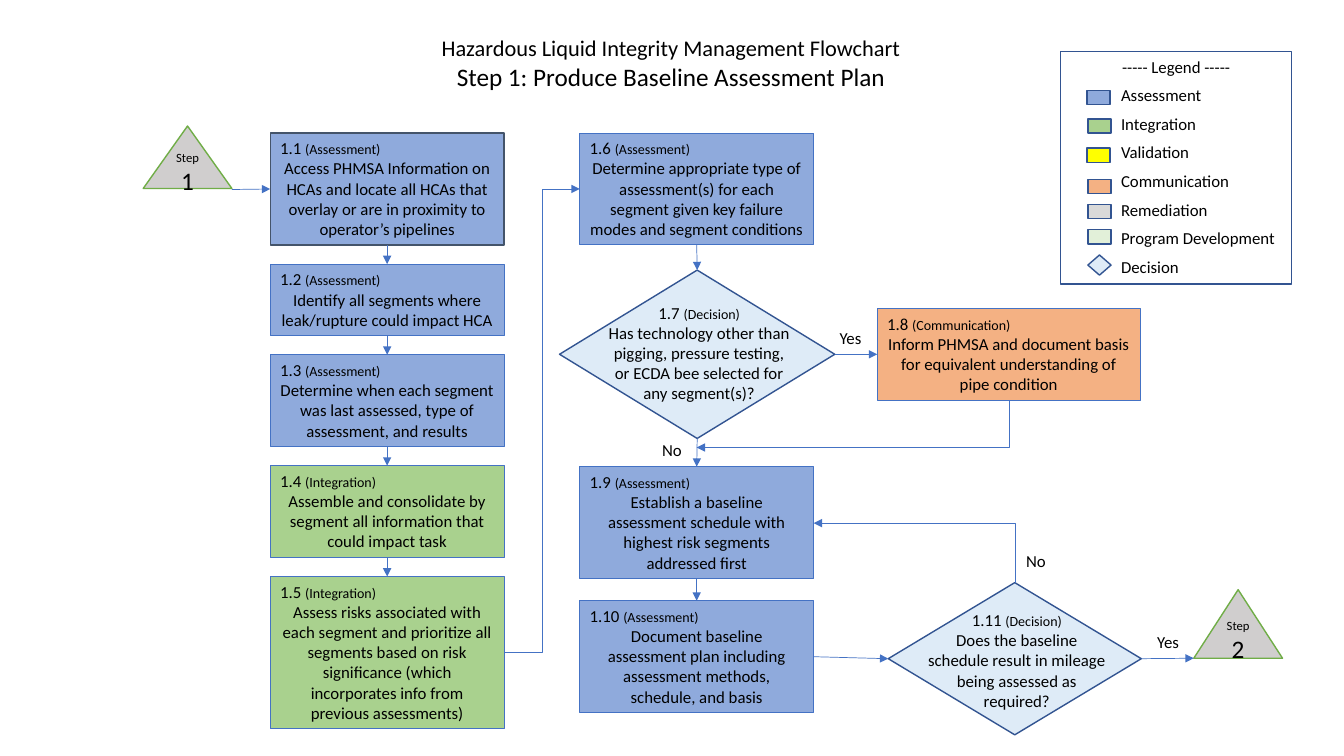
from dataclasses import dataclass
from typing import Optional

from lxml.etree import SubElement
from pptx import Presentation
from pptx.dml.color import RGBColor
from pptx.enum.shapes import MSO_CONNECTOR as Link, MSO_SHAPE as Shape
from pptx.enum.text import MSO_ANCHOR as Anchor, MSO_AUTO_SIZE as AutoSize, PP_ALIGN as Align
from pptx.oxml.ns import qn
from pptx.util import Inches, Pt


@dataclass(frozen=True)
class Theme:
    font: str = "Calibri"
    ink: str = "000000"
    outline: str = "325491"
    box_line: str = "4472C4"
    first_line: str = "44546A"
    step_fill: str = "D0CECE"
    step_line: str = "70AD47"
    assessment: str = "8FAADC"
    integration: str = "A9D18E"
    validation: str = "FFFF00"
    communication: str = "F4B183"
    remediation: str = "D9D9D9"
    program: str = "E2F0D9"
    decision: str = "DEEBF7"
    title: float = 18
    subtitle: float = 16
    body: float = 12
    kind: float = 10
    step: float = 9
    thin: float = 0.5
    medium: float = 0.75
    thick: float = 1


THEME = Theme()


@dataclass(frozen=True)
class Task:
    number: str
    kind: str
    text: str
    left: float
    top: float
    width: float
    height: float


@dataclass(frozen=True)
class Decision(Task):
    text_left: float
    text_top: float


@dataclass(frozen=True)
class Swatch:
    name: str
    fill: str
    left: float
    top: float


@dataclass(frozen=True)
class Arrow:
    """Ends are (task number, side); sides run 0 top, 1 left, 2 bottom, 3 right."""
    start: tuple[str, int]
    end: tuple[str, int]
    link: Link = Link.STRAIGHT


FILLS = {"Assessment": THEME.assessment, "Integration": THEME.integration,
         "Communication": THEME.communication}
COLUMN_LEFT, COLUMN_TOP, COLUMN_GAP, BOX_WIDTH = 2.68, 1.32, 0.19, 2.32
COLUMN = [
    ("1.1", "Assessment", 1.11, "Access PHMSA Information on HCAs and locate all HCAs that "
     "overlay or are in proximity to operator’s pipelines"),
    ("1.2", "Assessment", 0.71, "Identify all segments where leak/rupture could impact HCA"),
    ("1.3", "Assessment", 0.91, "Determine when each segment was last assessed, type of "
     "assessment, and results"),
    ("1.4", "Integration", 0.91, "Assemble and consolidate by segment all information that "
     "could impact task"),
    ("1.5", "Integration", 1.51, "Assess risks associated with each segment and prioritize all "
     "segments based on risk significance (which incorporates info from previous assessments)"),
]
TASKS = [
    Task("1.6", "Assessment", "Determine appropriate type of assessment(s) for each segment "
         "given key failure modes and segment conditions", 5.75, 1.32, BOX_WIDTH, 1.11),
    Task("1.8", "Communication", "Inform PHMSA and document basis for equivalent understanding "
         "of pipe condition", 8.7, 3.06, 2.61, 0.91),
    Task("1.9", "Assessment", "Establish a baseline assessment schedule with highest risk "
         "segments addressed first", 5.75, 4.63, BOX_WIDTH, 1.11),
    Task("1.10", "Assessment", "Document baseline assessment plan including assessment methods, "
         "schedule, and basis", 5.75, 5.96, BOX_WIDTH, 1.11),
]
DECISIONS = [
    Decision("1.7", "Decision", "Has technology other than pigging, pressure testing, or ECDA "
             "bee selected for any segment(s)?", 5.55, 2.68, 2.73, 1.67, 5.92, 2.95),
    Decision("1.11", "Decision", "Does the baseline schedule result in mileage being assessed "
             "as required?", 8.81, 5.78, 2.51, 1.51, 9.07, 6),
]
SWATCHES = [
    Swatch("Assessment", THEME.assessment, 10.78, 0.9),
    Swatch("Integration", THEME.integration, 10.79, 1.18),
    Swatch("Validation", THEME.validation, 10.78, 1.47),
    Swatch("Communication", THEME.communication, 10.79, 1.78),
    Swatch("Remediation", THEME.remediation, 10.79, 2.03),
    Swatch("Program Development", THEME.program, 10.79, 2.28),
    Swatch("Decision", THEME.decision, 10.79, 2.53),
]
ARROWS = [Arrow((a, 2), (b, 0)) for a, b in (
    ("1.1", "1.2"), ("1.2", "1.3"), ("1.3", "1.4"), ("1.4", "1.5"),
    ("1.6", "1.7"), ("1.7", "1.9"), ("1.9", "1.10"))] + [
    Arrow(("1.5", 3), ("1.6", 1), Link.ELBOW),
    Arrow(("1.7", 3), ("1.8", 1)),
    Arrow(("1.10", 3), ("1.11", 1)),
]
ANSWERS = [("Yes", 8.19, 3.2), ("No", 6.42, 4.31), ("Yes", 11.34, 6.22), ("No", 10.03, 5.41)]


def add_block(page, shape: Shape, left: float, top: float, width: float, height: float,
              fill: Optional[str], line: str, weight: float):
    block = page.shapes.add_shape(shape, *map(Inches, (left, top, width, height)))
    block.shadow.inherit = False
    if fill:
        block.fill.solid()
        block.fill.fore_color.rgb = RGBColor.from_string(fill)
    else:
        block.fill.background()
    block.line.color.rgb = RGBColor.from_string(line)
    block.line.width = Pt(weight)
    return block


def write(frame, paras: list, anchor: Anchor = Anchor.TOP, grow: bool = True) -> None:
    """Each paragraph is (alignment, [(text, size), ...])."""
    frame.word_wrap = True
    frame.vertical_anchor = anchor
    if grow:
        frame.auto_size = AutoSize.SHAPE_TO_FIT_TEXT
    for index, (align, spans) in enumerate(paras):
        para = frame.add_paragraph() if index else frame.paragraphs[0]
        para.alignment = align
        para.font.name = THEME.font
        para.font.color.rgb = RGBColor.from_string(THEME.ink)
        for text, size in spans:
            span = para.add_run()
            span.text = text
            if len(spans) > 1:
                span.font.size = Pt(size)
            else:
                para.font.size = Pt(size)


def add_text(page, left: float, top: float, width: float, height: float, paras: list) -> None:
    box = page.shapes.add_textbox(*map(Inches, (left, top, width, height)))
    write(box.text_frame, paras)


def task_paras(task: Task, heading: Align) -> list:
    return [(heading, [(f"{task.number} ", THEME.body), (f"({task.kind})", THEME.kind)]),
            (Align.CENTER, [(task.text, THEME.body)])]


def add_task(page, task: Task):
    first = task.number == "1.1"
    box = add_block(page, Shape.RECTANGLE, task.left, task.top, task.width, task.height,
                    FILLS[task.kind], THEME.first_line if first else THEME.box_line,
                    THEME.thick if first else THEME.medium)
    write(box.text_frame, task_paras(task, Align.LEFT))
    return box


def add_decision(page, task: Decision):
    diamond = add_block(page, Shape.FLOWCHART_DECISION, task.left, task.top, task.width,
                        task.height, THEME.decision, THEME.outline, THEME.thick)
    add_text(page, task.text_left, task.text_top, 2.03, 1.11, task_paras(task, Align.CENTER))
    return diamond


def add_step(page, left: float, top: float, height: float, paras: list) -> None:
    triangle = add_block(page, Shape.ISOSCELES_TRIANGLE, left, top, 0.88, height,
                         THEME.step_fill, THEME.step_line, THEME.thick)
    write(triangle.text_frame, [(Align.CENTER, spans) for spans in paras], Anchor.MIDDLE, False)


def add_legend(page) -> None:
    frame = add_block(page, Shape.RECTANGLE, 10.52, 0.51, 2.29, 2.31, None, THEME.outline,
                      THEME.thick).text_frame
    write(frame, [(Align.CENTER, [("----- Legend -----", THEME.body)])]
          + [(Align.LEFT, [(swatch.name, THEME.body)]) for swatch in SWATCHES])
    for para, swatch in zip(frame.paragraphs[1:], SWATCHES):
        para.level = 1
        para.space_before = Pt(6)
        para._p.get_or_add_pPr().set("marL", str(Inches(0.5)))
        diamond = swatch.name == "Decision"
        add_block(page, Shape.FLOWCHART_DECISION if diamond else Shape.RECTANGLE, swatch.left,
                  swatch.top, 0.23, 0.2 if diamond else 0.14, swatch.fill, THEME.outline,
                  THEME.thick)


def add_arrow(page, link: Link, start: tuple = (0, 0), end: tuple = (0, 0)):
    arrow = page.shapes.add_connector(link, *map(Inches, (*start, *end)))
    arrow.line.color.rgb = RGBColor.from_string(THEME.box_line)
    arrow.line.width = Pt(THEME.thin)
    SubElement(arrow.line._get_or_add_ln(), qn("a:tailEnd"), type="triangle")
    SubElement(arrow._element.spPr, qn("a:effectLst"))
    return arrow


def add_turn(page, start: tuple, end: tuple) -> None:
    """Draw an arrow that leaves vertically, then turns once to the left."""
    (x1, y1), (x2, y2) = start, end
    middle_x, middle_y = (x1 + x2) / 2, (y1 + y2) / 2
    half_width, half_height = abs(y2 - y1) / 2, abs(x2 - x1) / 2
    arrow = add_arrow(page, Link.ELBOW, (middle_x - half_width, middle_y - half_height),
                      (middle_x + half_width, middle_y + half_height))
    properties = arrow._element.spPr
    properties.find(qn("a:prstGeom")).set("prst", "bentConnector2")
    frame = properties.find(qn("a:xfrm"))
    upward = y2 < y1
    frame.set("rot", str((270 if upward else 90) * 60000))
    if upward:
        frame.set("flipV", "1")


def main() -> None:
    deck = Presentation()
    deck.slide_width, deck.slide_height = Inches(13.33), Inches(7.5)
    page = deck.slides.add_slide(deck.slide_layouts[6])
    add_text(page, 3.83, 0.29, 5.65, 0.67, [
        (Align.CENTER, [("Hazardous Liquid Integrity Management Flowchart", THEME.subtitle)]),
        (Align.CENTER, [("Step 1: Produce Baseline Assessment Plan", THEME.title)])])
    blocks, top = {}, COLUMN_TOP
    for number, kind, height, text in COLUMN:
        task = Task(number, kind, text, COLUMN_LEFT, top, BOX_WIDTH, height)
        blocks[number] = add_task(page, task)
        top += height + COLUMN_GAP
    blocks |= {task.number: add_task(page, task) for task in TASKS}
    blocks |= {task.number: add_decision(page, task) for task in DECISIONS}
    add_step(page, 1.42, 1.25, 0.62, [[("Step ", THEME.step), ("1", THEME.title)]])
    add_step(page, 11.84, 5.85, 0.68, [[("Step", THEME.step)], [("2", THEME.title)]])
    add_legend(page)
    for arrow in ARROWS:
        line = add_arrow(page, arrow.link)
        line.begin_connect(blocks[arrow.start[0]], arrow.start[1])
        line.end_connect(blocks[arrow.end[0]], arrow.end[1])
    add_arrow(page, Link.STRAIGHT, (2.3, 1.88), (2.68, 1.88)).end_connect(blocks["1.1"], 1)
    add_arrow(page, Link.STRAIGHT, (11.32, 6.53), (11.84, 6.53)).begin_connect(blocks["1.11"], 3)
    add_turn(page, (10.07, 5.78), (8.07, 5.19))
    add_turn(page, (10.01, 3.97), (6.91, 4.44))
    for answer, left, top in ANSWERS:
        add_text(page, left, top, 0.49, 0.3, [(Align.CENTER, [(answer, THEME.body)])])
    deck.save("out.pptx")


if __name__ == "__main__":
    main()
